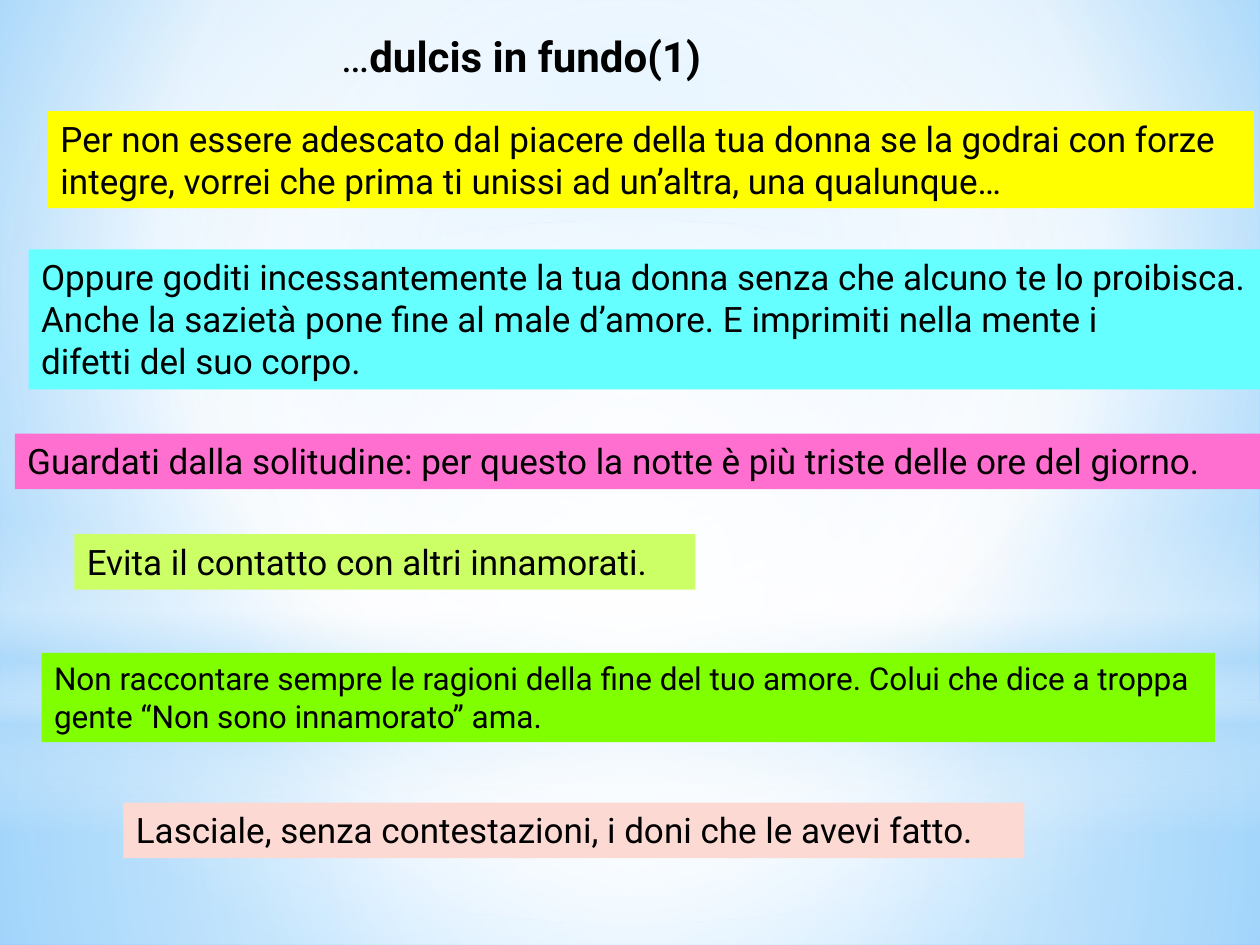
from lxml import etree
from pptx import Presentation
from pptx import util as u
from pptx.dml.color import RGBColor
from pptx.enum import shapes, text
from pptx.oxml import ns

HUES = {
    "ink": "000000", "white": "FFFFFF", "mist": "B4DCFA", "sky": "9ED5FF",
    "blue": "5BB9FF", "yellow": "FFFF00", "cyan": "66FFFF", "pink": "FF6FCF",
    "lime": "CCFF66", "green": "80FF00", "peach": "FCD9D3",
}
RECT = shapes.MSO_SHAPE.RECTANGLE
OVAL = shapes.MSO_SHAPE.OVAL


def shade(node, stops, focus=None):
    """Swap the first solid fill in node for a gradient of (place, hue, opacity):
    round about the focus (left, top, right, bottom in %), else top to bottom."""
    solid = node.find(".//" + ns.qn("a:solidFill"))
    grad = etree.Element(ns.qn("a:gradFill"), rotWithShape="1")
    row = etree.SubElement(grad, ns.qn("a:gsLst"))
    for place, hue, alpha in stops:
        stop = etree.SubElement(row, ns.qn("a:gs"), pos=str(place * 1000))
        tint = etree.SubElement(stop, ns.qn("a:srgbClr"), val=HUES[hue])
        if alpha < 100:
            etree.SubElement(tint, ns.qn("a:alpha"), val=str(alpha * 1000))
    if focus:
        ring = etree.SubElement(grad, ns.qn("a:path"), path="circle")
        sides = {side: str(part * 1000) for side, part in zip("ltrb", focus)}
        etree.SubElement(ring, ns.qn("a:fillToRect"), **sides)
    else:
        etree.SubElement(grad, ns.qn("a:lin"), ang="5400000", scaled="0")
    solid.getparent().replace(solid, grad)


def write(para, words, size=20, bold=False, hue="ink"):
    """Add a run to the paragraph."""
    para.alignment = text.PP_ALIGN.LEFT
    run = para.add_run()
    run.text = words
    run.font.name = "Roboto"
    run.font.size = u.Pt(size)
    run.font.bold = bold
    run.font.color.rgb = RGBColor.from_string(HUES[hue])


deck = Presentation()
deck.slide_width, deck.slide_height = u.Cm(25.4), u.Cm(19.05)
slide = deck.slides.add_slide(deck.slide_layouts[6])

# Backdrop: blue glow with four translucent layers
slide.background.fill.solid()
shade(slide.element, [(0, "sky", 100), (60, "white", 100), (100, "blue", 100)],
      (20, 10, 20, 60))

mid = (50, 50, 50, 50)
layers = [
    (RECT, 14.17, 4.88, mid,
     [(0, "white", 91), (37, "white", 76), (100, "mist", 79)]),
    (RECT, 0, 14.17, mid,
     [(0, "white", 89), (48, "white", 62), (100, "mist", 79)]),
    (RECT, 10.46, 6.35, None,
     [(0, "white", 0), (29, "white", 30), (45, "mist", 40),
      (55, "white", 26), (65, "mist", 60), (100, "white", 0)]),
    (OVAL, 4.45, 14.17, mid, [(0, "white", 100), (56, "white", 0)]),
]
for kind, top, high, focus, stops in layers:
    layer = slide.shapes.add_shape(
        kind, 0, u.Cm(top), deck.slide_width, u.Cm(high))
    layer.shadow.inherit = False
    layer.line.fill.background()
    layer.fill.solid()
    shade(layer.element, stops, focus)

# Title
title = slide.shapes.add_textbox(u.Cm(6.63), u.Cm(0.5), u.Cm(13.64), u.Cm(1.28))
title.text_frame.word_wrap = True
head = title.text_frame.paragraphs[0]
write(head, "…", size=24)
write(head, "dulcis in fundo(1)", size=24, bold=True)

# Advice boxes: left, top, width, height, hue, text size, lines
notes = [
    (0.97, 2.24, 24.31, 1.96, "yellow", 20,
     ["Per non essere adescato dal piacere della tua donna se la godrai con forze",
      "integre, vorrei che prima ti unissi ad un’altra, una qualunque…"]),
    (0.58, 5.03, 25.37, 2.82, "cyan", 20,
     ["Oppure goditi incessantemente la tua donna senza che alcuno te lo proibisca.",
      "Anche la sazietà pone fine al male d’amore. E imprimiti nella mente i",
      "difetti del suo corpo."]),
    (0.3, 8.74, 25.53, 1.12, "pink", 20,
     ["Guardati dalla solitudine: per questo la notte è più triste delle ore del giorno."]),
    (1.5, 10.77, 12.52, 1.12, "lime", 20,
     ["Evita il contatto con altri innamorati."]),
    (0.84, 13.16, 23.65, 1.8, "green", 18,
     ["Non raccontare sempre le ragioni della fine del tuo amore. Colui che dice a troppa "
      "gente “Non sono innamorato” ama."]),
    (2.49, 16.18, 18.16, 1.12, "peach", 20,
     ["Lasciale, senza contestazioni, i doni che le avevi fatto."]),
]
for left, top, wide, high, hue, size, lines in notes:
    note = slide.shapes.add_shape(
        RECT, u.Cm(left), u.Cm(top), u.Cm(wide), u.Cm(high))
    note.shadow.inherit = False
    note.line.fill.background()
    note.fill.solid()
    note.fill.fore_color.rgb = RGBColor.from_string(HUES[hue])
    frame = note.text_frame
    frame.word_wrap = True
    frame.vertical_anchor = text.MSO_ANCHOR.TOP
    for i, line in enumerate(lines):
        para = frame.add_paragraph() if i else frame.paragraphs[0]
        write(para, line, size=size)

deck.save("out.pptx")
